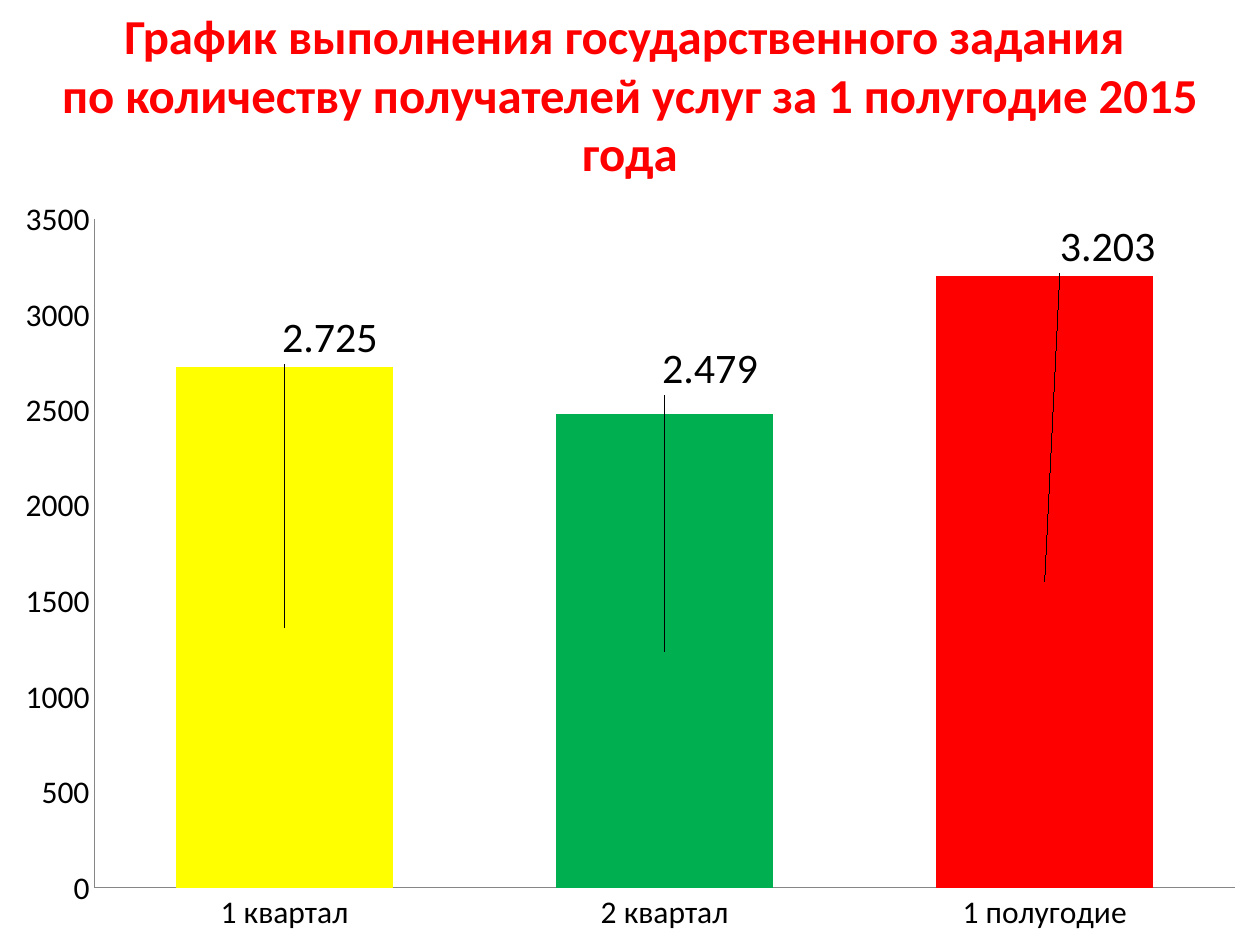
from lxml import etree
from pptx import Presentation
from pptx.chart.data import CategoryChartData
from pptx.dml.color import RGBColor
from pptx.enum.chart import XL_CHART_TYPE, XL_TICK_MARK
from pptx.enum.text import MSO_ANCHOR, PP_ALIGN
from pptx.oxml.ns import qn
from pptx.util import Inches, Pt

STACKED = XL_CHART_TYPE.COLUMN_STACKED
NO_TICK = XL_TICK_MARK.NONE
MIDDLE = MSO_ANCHOR.MIDDLE
CENTER = PP_ALIGN.CENTER

RED = RGBColor(0xFF, 0x00, 0x00)
YELLOW = RGBColor(0xFF, 0xFF, 0x00)
GREEN = RGBColor(0x00, 0xB0, 0x50)
BLACK = RGBColor(0x00, 0x00, 0x00)
GRAY = RGBColor(0x86, 0x86, 0x86)
FONT = "Calibri"

TITLE = ("График выполнения государственного задания \v"
         "по количеству получателей услуг за 1 полугодие 2015 года")

# Category, value, label, bar colour, label shift as a share of the chart
BARS = [
    ("1 квартал", 2725, "2.725", YELLOW, (0.036, -0.38)),
    ("2 квартал", 2479, "2.479", GREEN, (0.036, -0.37)),
    ("1 полугодие", 3203, "3.203", RED, (0.05, -0.44)),
]


def style(font, size, color, bold=False):
    font.name = FONT
    font.size = Pt(size)
    font.bold = bold
    font.color.rgb = color


def make_layout(**values):
    """Return a manual chart layout holding the given settings."""
    layout = etree.Element(qn("c:layout"))
    manual = etree.SubElement(layout, qn("c:manualLayout"))
    for name, value in values.items():
        etree.SubElement(manual, qn("c:" + name)).set("val", str(value))
    return layout


def add_title(slide):
    box = slide.shapes.add_textbox(0, 0, Inches(10), Inches(1.62))
    frame = box.text_frame
    frame.word_wrap = True
    frame.vertical_anchor = MIDDLE
    frame.margin_bottom = Inches(0.18)
    para = frame.paragraphs[0]
    para.text = TITLE
    para.alignment = CENTER
    for run in para.runs:
        style(run.font, 27.9, RED, True)


def style_axis(axis):
    axis.major_tick_mark = NO_TICK
    axis.minor_tick_mark = NO_TICK
    axis.has_major_gridlines = False
    axis.format.line.color.rgb = GRAY
    style(axis.tick_labels.font, 18, BLACK)


def style_bar(point, text, color, shift):
    point.format.fill.solid()
    point.format.fill.fore_color.rgb = color
    label = point.data_label
    frame = label.text_frame
    frame.text = text
    style(frame.paragraphs[0].runs[0].font, 24, BLACK)
    # Move the label above its bar
    rich = frame._txBody
    rich.getparent().addprevious(make_layout(x=shift[0], y=shift[1]))


def add_bars(slide):
    data = CategoryChartData()
    data.categories = [bar[0] for bar in BARS]
    data.add_series("Series 1", [bar[1] for bar in BARS])
    chart = slide.shapes.add_chart(
        STACKED, 0, Inches(1.47), Inches(10), Inches(6.03), data).chart
    chart.has_title = False
    chart.has_legend = False
    style(chart.font, 18, BLACK)

    # Axes
    style_axis(chart.category_axis)
    style_axis(chart.value_axis)
    chart.value_axis.minimum_scale = 0
    chart.value_axis.maximum_scale = 3500
    chart.value_axis.major_unit = 500

    # Bars and labels
    plot = chart.plots[0]
    plot.gap_width = 75
    plot.overlap = 100
    plot.vary_by_categories = False
    series = plot.series[0]
    series.format.fill.solid()
    series.format.fill.fore_color.rgb = RED
    series.data_labels.show_value = True
    for i, (_, _, text, color, shift) in enumerate(BARS):
        style_bar(series.points[i], text, color, shift)

    # Plot area
    area = chart._chartSpace.chart.plotArea
    for old in area.findall(qn("c:layout")):
        area.remove(old)
    area.insert(0, make_layout(layoutTarget="inner", xMode="edge",
                               yMode="edge", x=0.075, y=0.045,
                               w=0.905, h=0.88))


def main():
    deck = Presentation()
    deck.slide_width = Inches(10)
    deck.slide_height = Inches(7.5)
    slide = deck.slides.add_slide(deck.slide_layouts[6])
    add_bars(slide)
    add_title(slide)
    deck.save("out.pptx")


if __name__ == "__main__":
    main()
